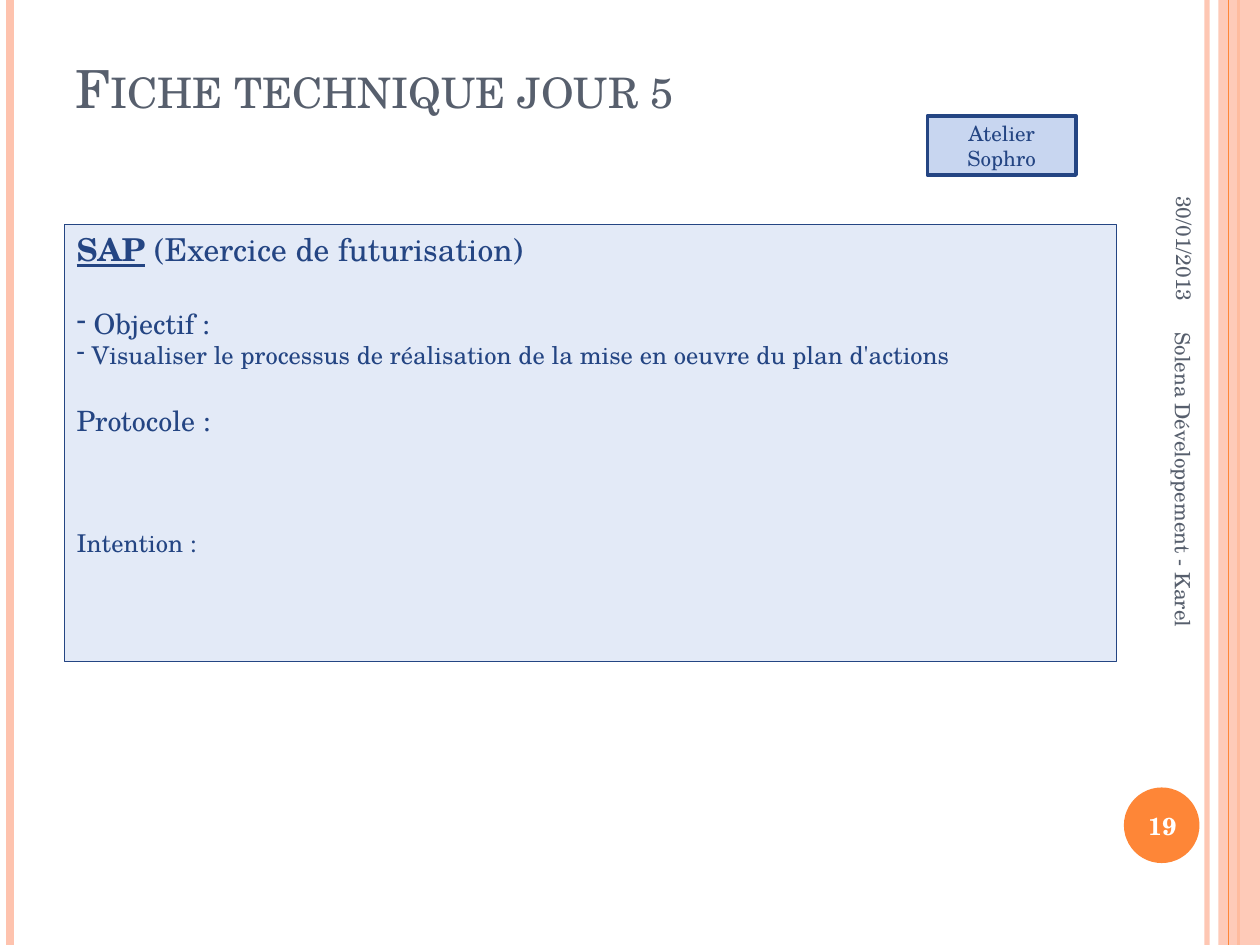
from lxml.etree import SubElement
from pptx import Presentation
from pptx.dml.color import RGBColor
from pptx.enum.shapes import MSO_CONNECTOR, MSO_SHAPE
from pptx.enum.text import MSO_ANCHOR as Anchor, PP_ALIGN as Align
from pptx.oxml.ns import qn
from pptx.util import Inches, Pt

FONT = "TeX Gyre Schola"
PEACH = RGBColor(0xFE, 0xC3, 0xAE)
ORANGE = RGBColor(0xFE, 0x86, 0x37)
GREY = RGBColor(0x57, 0x5F, 0x6D)
NAVY = RGBColor(0x24, 0x45, 0x83)
TAG_BLUE = RGBColor(0xC8, 0xD6, 0xF0)
PANEL_BLUE = RGBColor(0xE3, 0xEA, 0xF7)
WHITE = RGBColor(0xFF, 0xFF, 0xFF)
SLIDE_HEIGHT = 7.5


def set_opacity(element, percent):
    """Make the first colour of a shape or connector partly transparent."""
    color = next(element._element.spPr.iter(qn("a:srgbClr")))
    SubElement(color, qn("a:alpha")).set("val", str(percent * 1000))


def add_stripe(slide, x, color, width, opacity=100):
    """Draw a full-height vertical line."""
    stripe = slide.shapes.add_connector(
        MSO_CONNECTOR.STRAIGHT, Inches(x), 0, Inches(x), Inches(SLIDE_HEIGHT))
    stripe.line.color.rgb = color
    stripe.line.width = Pt(width)
    if opacity < 100:
        set_opacity(stripe, opacity)
    SubElement(stripe._element.spPr, qn("a:effectLst"))


def add_block(slide, kind, box, fill, line=None, line_width=0):
    block = slide.shapes.add_shape(kind, *map(Inches, box))
    block.shadow.inherit = False
    block.fill.solid()
    block.fill.fore_color.rgb = fill
    if line is None:
        block.line.fill.background()
    else:
        block.line.color.rgb = line
        block.line.width = Pt(line_width)
    return block


def add_run(paragraph, text, size, color, bold=False, underline=False):
    run = paragraph.add_run()
    run.text = text
    font = run.font
    font.name, font.size, font.color.rgb = FONT, Pt(size), color
    font.bold, font.underline = bold, underline
    return run


def write_line(shape, text, size, color, align=Align.LEFT,
               anchor=Anchor.MIDDLE, bold=False):
    frame = shape.text_frame
    frame.word_wrap = True
    frame.vertical_anchor = anchor
    paragraph = frame.paragraphs[0]
    paragraph.alignment = align
    return add_run(paragraph, text, size, color, bold)


def add_label(slide, box, text, size, color, rotation=0, **style):
    label = slide.shapes.add_textbox(*map(Inches, box))
    label.rotation = rotation
    return write_line(label, text, size, color, **style)


def add_dash(paragraph):
    properties = paragraph._p.get_or_add_pPr()
    properties.set("marL", "0")
    properties.set("indent", "0")
    SubElement(properties, qn("a:buChar")).set("char", "-")


def add_frame_decor(slide):
    add_stripe(slide, 9.58, PEACH, 3, 93)
    add_stripe(slide, 0.08, PEACH, 4.5)
    add_stripe(slide, 9.83, ORANGE, 1.5)
    band = add_block(slide, MSO_SHAPE.RECTANGLE,
                     (9.67, 0, 0.33, SLIDE_HEIGHT), PEACH)
    set_opacity(band, 87)
    add_stripe(slide, 9.75, ORANGE, 0.75)
    add_block(slide, MSO_SHAPE.OVAL, (8.92, 6.25, 0.6, 0.6), ORANGE)


def add_exercise_panel(slide):
    panel = add_block(slide, MSO_SHAPE.RECTANGLE, (0.51, 1.78, 8.35, 3.47),
                      PANEL_BLUE, NAVY, 0.75)
    frame = panel.text_frame
    frame.word_wrap = True
    frame.vertical_anchor = Anchor.TOP
    heading = frame.paragraphs[0]
    heading.alignment = Align.LEFT
    add_run(heading, "SAP", 18, NAVY, bold=True, underline=True)
    add_run(heading, " (Exercice de futurisation)", 18, NAVY)

    # text, size, space before, dashed
    sections = [
        (" Objectif :", 16, 22, True),
        (" Visualiser le processus de réalisation de la mise en oeuvre"
         " du plan d'actions", 14, 0, True),
        ("Protocole :", 16, 19.5, False),
        ("Intention :", 14, 51.5, False),
    ]
    for text, size, gap, dashed in sections:
        paragraph = frame.add_paragraph()
        paragraph.alignment = Align.LEFT
        paragraph.space_before = Pt(gap)
        if dashed:
            add_dash(paragraph)
        add_run(paragraph, text, size, NAVY)


def main():
    deck = Presentation()
    deck.slide_width, deck.slide_height = Inches(10), Inches(SLIDE_HEIGHT)
    slide = deck.slides.add_slide(deck.slide_layouts[6])

    add_frame_decor(slide)
    title = add_label(slide, (0.5, 0.3, 8.17, 0.69), "Fiche technique jour 5",
                      30, GREY, anchor=Anchor.BOTTOM)
    title.font._element.set("cap", "small")
    add_label(slide, (8.3, 1.18, 2.2, 0.42), "30/01/2013", 12, GREY,
              rotation=90, align=Align.RIGHT)
    add_label(slide, (8.89, 6.27, 0.67, 0.57), "19", 14, WHITE,
              align=Align.CENTER, bold=True)
    add_label(slide, (7.64, 4.09, 3.5, 0.4), "Solena Développement - Karel",
              12, GREY, rotation=90)
    workshop = add_block(slide, MSO_SHAPE.RECTANGLE, (7.36, 0.92, 1.18, 0.47),
                         TAG_BLUE, NAVY, 2)
    write_line(workshop, "Atelier Sophro", 12, NAVY, align=Align.CENTER)
    add_exercise_panel(slide)
    deck.save("out.pptx")


if __name__ == "__main__":
    main()
